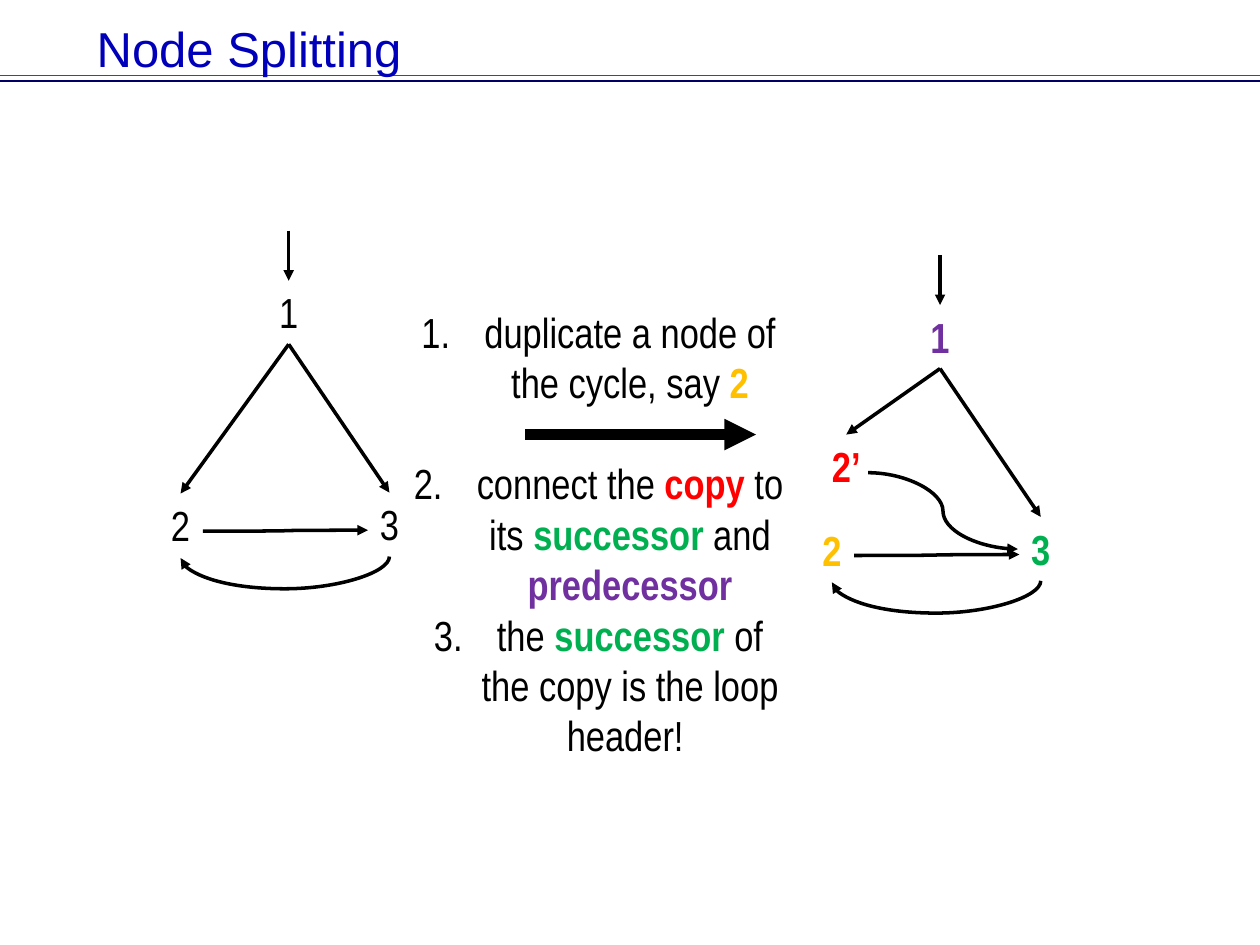
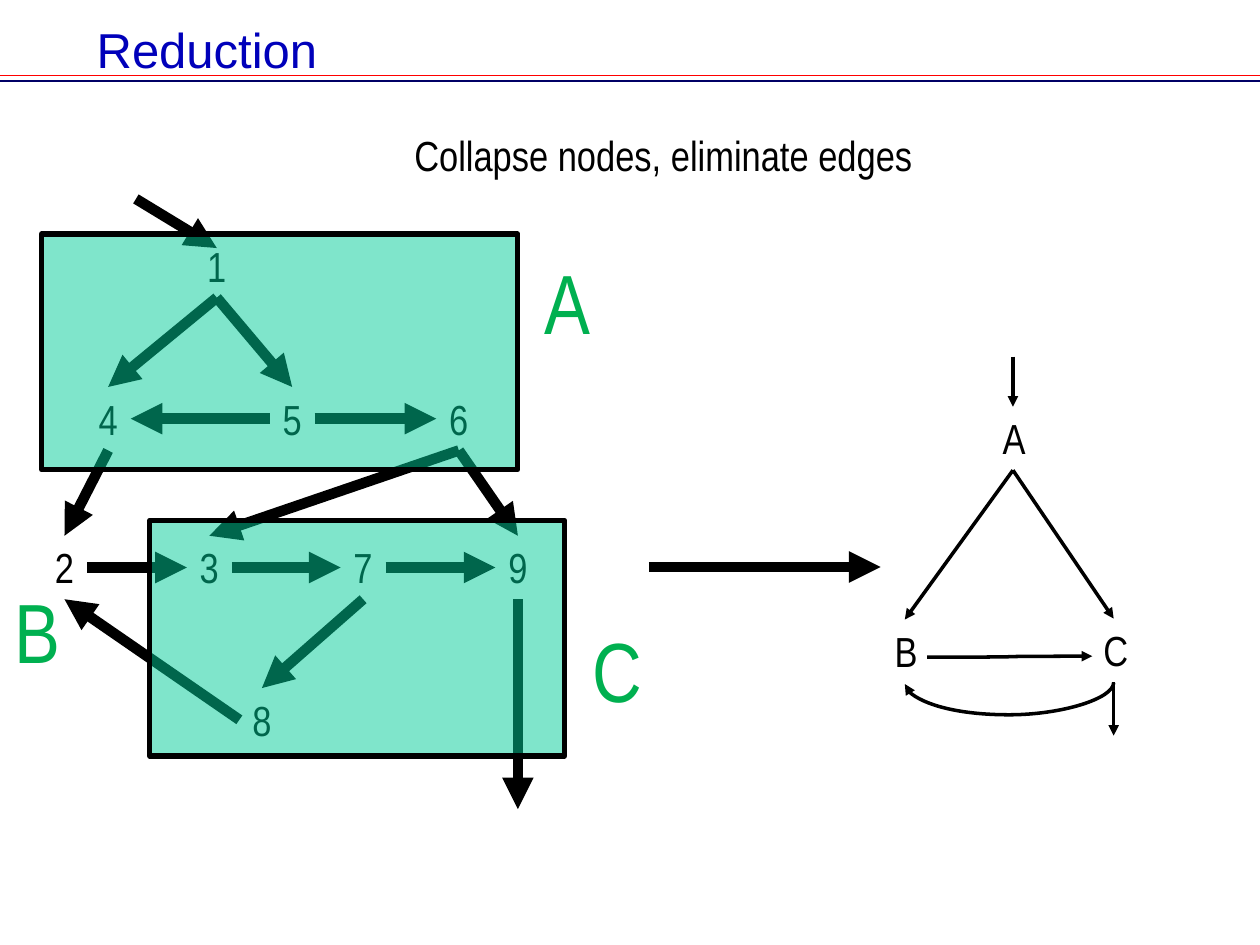
from dataclasses import dataclass

import pptx
import pptx.dml.color
import pptx.enum.shapes
import pptx.enum.text
import pptx.oxml
import pptx.oxml.ns
import pptx.util

Cm = pptx.util.Cm
Pt = pptx.util.Pt
LINE = pptx.enum.shapes.MSO_CONNECTOR
ANCHOR = pptx.enum.text.MSO_ANCHOR
TOP, LEFT, BOTTOM, RIGHT = range(4)  # connection sites


@dataclass(frozen=True)
class Theme:
    title_font: str = "Arial"
    body_font: str = "Arial Narrow"
    title_size: int = 28
    body_size: int = 24
    region_size: int = 48
    thin: int = 2
    thick: int = 6
    title: str = "0000BA"
    rule_red: str = "FF0000"
    rule_navy: str = "000066"
    ink: str = "000000"
    region: str = "00CC99"
    original: str = "FFC000"
    duplicate: str = "FF0000"
    successor: str = "00B050"
    predecessor: str = "7030A0"


T = Theme()


# --- Text ---
def rgb(color):
    return pptx.dml.color.RGBColor.from_string(color)


def add_run(p, text, color=T.ink, bold=False, size=T.body_size, font=T.body_font):
    r = p.add_run()
    r.text = text
    r.font.name, r.font.size, r.font.bold = font, Pt(size), bold
    r.font.color.rgb = rgb(color)


def text_box(s, x, y, w, h, wrap=True):
    sp = s.shapes.add_textbox(Cm(x), Cm(y), Cm(w), Cm(h))
    sp.text_frame.word_wrap = wrap
    return sp


def label(s, text, cx, top, color=T.ink, bold=False, size=T.body_size, w=0.91):
    """One centred line of text around cx."""
    h = 1.28 if size == T.body_size else 2.31
    sp = text_box(s, cx - w / 2, top, w, h, wrap=False)
    sp.text_frame.auto_size = pptx.enum.text.MSO_AUTO_SIZE.SHAPE_TO_FIT_TEXT
    p = sp.text_frame.paragraphs[0]
    p.alignment = pptx.enum.text.PP_ALIGN.CENTER
    add_run(p, text, color, bold, size)
    return sp


def numbered_list(s, x, y, w, h, items):
    """items: (runs, space after in points)."""
    tf = text_box(s, x, y, w, h).text_frame
    for i, (runs, gap) in enumerate(items):
        p = tf.add_paragraph() if i else tf.paragraphs[0]
        p.alignment = pptx.enum.text.PP_ALIGN.CENTER
        p.space_after = Pt(gap)
        pPr = p._p.get_or_add_pPr()
        pPr.set("marL", str(Cm(1.27)))
        pPr.set("indent", str(-Cm(1.27)))
        number = pptx.oxml.parse_xml(
            f'<a:buAutoNum {pptx.oxml.ns.nsdecls("a")} type="arabicPeriod"/>')
        pPr.append(number)
        for text, *style in runs:
            add_run(p, text, *style)


# --- Lines ---
def line(s, start, end, color=T.ink, weight=T.thin, kind=LINE.STRAIGHT, head=False):
    c = s.shapes.add_connector(kind, *map(Cm, (*start, *end)))
    c.line.color.rgb = rgb(color)
    c.line.width = Pt(weight)
    ns = pptx.oxml.ns.nsdecls("a")
    if head:
        ln = c.line._get_or_add_ln()
        ln.append(pptx.oxml.parse_xml(f'<a:tailEnd {ns} type="triangle"/>'))
    c._element.spPr.append(pptx.oxml.parse_xml(f"<a:effectLst {ns}/>"))
    return c


def arrow(s, start, end, weight=T.thin, kind=LINE.STRAIGHT):
    return line(s, start, end, weight=weight, kind=kind, head=True)


def edge(s, a, a_site, b, b_site, weight=T.thin):
    c = arrow(s, (0, 0), (1, 1), weight)
    c.begin_connect(a, a_site)
    c.end_connect(b, b_site)


def back_arc(s, x_from, x_to, y, sag=0.65, drop=0.03):
    """Arc hanging below y, drawn from right to left: a curve turned by 90°."""
    cx, cy, span = (x_from + x_to) / 2, y + drop / 2, x_from - x_to
    c = arrow(s, (cx - drop / 2, cy - span / 2), (cx + drop / 2, cy + span / 2),
              kind=LINE.CURVE)
    spPr = c._element.spPr
    spPr.find(pptx.oxml.ns.qn("a:xfrm")).set("rot", "5400000")
    guides = spPr.find(pptx.oxml.ns.qn("a:prstGeom")).find(pptx.oxml.ns.qn("a:avLst"))
    guides.append(pptx.oxml.parse_xml(
        f'<a:gd {pptx.oxml.ns.nsdecls("a")} name="adj1" '
        f'fmla="val {round(sag / drop * 100000)}"/>'))


# --- Shared slide parts ---
def new_slide(prs, title, title_h=1.47, anchor=ANCHOR.MIDDLE):
    s = prs.slides.add_slide(prs.slide_layouts[6])
    for y, color in ((1.52, T.rule_red), (1.63, T.rule_navy)):
        line(s, (0, y), (25.4, y), color, 1)
    tf = text_box(s, 1.7, 0.25, 21.97, title_h).text_frame
    tf.vertical_anchor = anchor
    add_run(tf.paragraphs[0], title, T.title, size=T.title_size, font=T.title_font)
    return s


def cycle_graph(s, cx, top, names, colors=(T.ink,) * 3, bold=False):
    """Head above a two-node cycle; the edge from head to left is the caller's."""
    offsets = ((0, 0), (-2.18, 4.29), (2.03, 4.27))
    head, left, right = (
        label(s, name, cx + dx, top + dy, color, bold)
        for name, color, (dx, dy) in zip(names, colors, offsets))
    arrow(s, (cx, top - 1.01), (cx, top)).end_connect(head, TOP)
    edge(s, head, BOTTOM, right, TOP)
    arrow(s, (cx - 1.73, top + 5.05), (cx + 1.6, top + 5.03), kind=LINE.CURVE)
    back_arc(s, cx + 2.03, cx - 2.18, top + 5.56)
    return head, left, right


def region(s, x, y, w, h):
    sp = s.shapes.add_shape(pptx.enum.shapes.MSO_SHAPE.RECTANGLE,
                            Cm(x), Cm(y), Cm(w), Cm(h))
    sp.shadow.inherit = False
    sp.fill.solid()
    sp.fill.fore_color.rgb = rgb(T.region)
    color = sp._element.spPr.find(pptx.oxml.ns.qn("a:solidFill"))[0]
    color.append(pptx.oxml.parse_xml(
        f'<a:alpha {pptx.oxml.ns.nsdecls("a")} val="50000"/>'))
    sp.line.color.rgb = rgb(T.ink)
    sp.line.width = Pt(3)


# --- Slides ---
def node_splitting(prs):
    s = new_slide(prs, "Node Splitting", 2.54, ANCHOR.TOP)

    # Before the split
    head, left, _ = cycle_graph(s, 5.82, 5.66, "123")
    edge(s, head, BOTTOM, left, TOP)

    # After the split
    head, _, _ = cycle_graph(s, 18.95, 6.15, "123",
                             (T.predecessor, T.original, T.successor), True)
    duplicate = label(s, "2’", 17.06, 8.76, T.duplicate, True, w=1.09)
    edge(s, head, BOTTOM, duplicate, TOP)
    arrow(s, (17.5, 9.53), (20.52, 11.07), kind=LINE.CURVE)

    # Steps
    arrow(s, (10.59, 8.76), (15.24, 8.76), T.thick)
    numbered_list(s, 7.95, 6.05, 8.23, 9.5, (
        ([("duplicate a node of the cycle, say ",), ("2", T.original, True)], 29),
        ([("connect the ",), ("copy", T.duplicate, True), (" to its ",),
          ("successor", T.successor, True), (" and ",),
          ("predecessor", T.predecessor, True)], 0),
        ([("the",), (" successor", T.successor, True),
          (" of the copy is the loop header! ",)], 0)))


def reduction(prs):
    s = new_slide(prs, "Reduction")
    label(s, "Collapse nodes, eliminate edges", 13.37, 2.49, w=10.69)

    # Reduced graph
    head, left, right = cycle_graph(s, 20.42, 8.2, "ABC")
    edge(s, head, BOTTOM, left, TOP)
    arrow(s, (22.45, 13.82), (22.45, 14.83)).begin_connect(right, BOTTOM)
    arrow(s, (13.08, 11.43), (17.75, 11.43), T.thick)

    # Full graph: rows of nodes, then edges
    rows = {4.72: {"1": 4.37},
            7.8: {"4": 2.18, "5": 5.89, "6": 9.25},
            10.8: {"2": 1.3, "3": 4.22, "7": 7.32, "9": 10.44},
            13.87: {"8": 5.28}}
    nodes = {name: label(s, name, cx, top)
             for top, row in rows.items() for name, cx in row.items()}
    for sites, pairs in (((BOTTOM, TOP), ("14", "15", "42", "63", "69", "78")),
                         ((RIGHT, LEFT), ("56", "23", "37", "79")),
                         ((LEFT, RIGHT), ("54",)),
                         ((LEFT, BOTTOM), ("82",))):
        for a, b in pairs:
            edge(s, nodes[a], sites[0], nodes[b], sites[1], T.thick)
    arrow(s, (2.74, 4.01), (4.37, 5), T.thick)
    arrow(s, (10.44, 12.08), (10.44, 16.31), T.thick).begin_connect(nodes["9"], BOTTOM)

    # Collapsed regions
    region(s, 0.84, 4.72, 9.6, 4.75)
    region(s, 3.02, 10.49, 8.36, 4.75)
    for name, cx, top in (("A", 11.44, 4.93), ("B", 0.75, 11.56), ("C", 12.42, 12.34)):
        label(s, name, cx, top, T.successor, size=T.region_size, w=1.45)


def main():
    prs = pptx.Presentation()
    prs.slide_width, prs.slide_height = Cm(25.4), Cm(19.05)
    node_splitting(prs)
    reduction(prs)
    prs.save("out.pptx")


if __name__ == "__main__":
    main()
